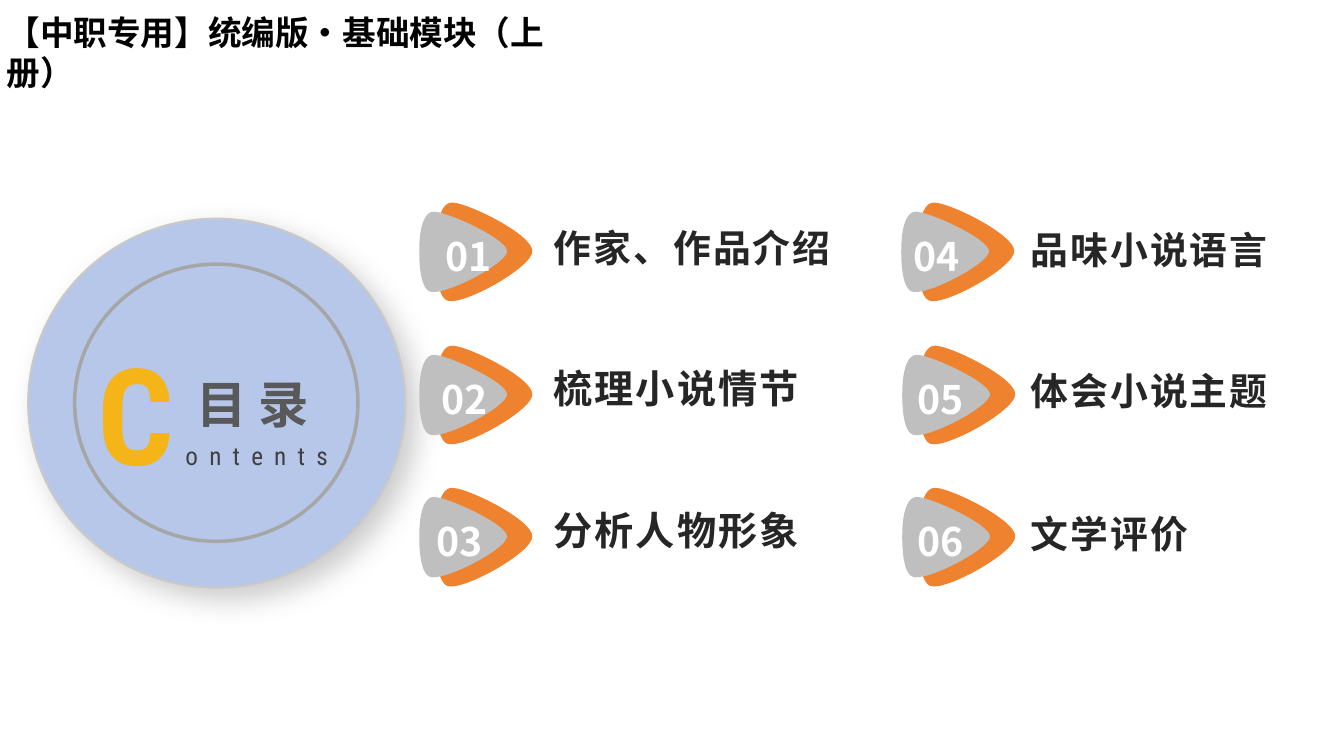
import pptx
import pptx.util
import pptx.dml.color
import pptx.enum.shapes
import pptx.enum.text
import pptx.oxml
import pptx.oxml.ns

PX = 9144  # one px is a hundredth of an inch
SANS = "Noto Sans CJK SC"
LATIN = "Roboto Condensed"
LEFT = pptx.enum.text.PP_ALIGN.LEFT
MID = pptx.enum.text.PP_ALIGN.CENTER
SHAPES = pptx.enum.shapes.MSO_SHAPE
SPACE = pptx.oxml.ns.nsdecls("a")
ROWS = 201, 343, 484

# Badge outlines: start point, then cubic curves, from the badge corner
BACK = (33, 0), [
    ((50, 1), (112, 32), (112, 48)),
    ((113, 64), (41, 104), (27, 97)),
    ((14, 90), (16, 42), (16, 42)),
    ((17, 41), (16, -1), (33, 0)),
]
FRONT = (15, 9), [
    ((30, 10), (86, 36), (87, 48)),
    ((87, 61), (22, 94), (10, 88)),
    ((-2, 83), (0, 43), (0, 43)),
    ((0, 43), (0, 8), (15, 9)),
]

# Row, badge left, number, number box left and width, label, label box, size
ITEMS = [
    (0, 416, "01", 426, 77, "作家、作品介绍", (537, 218, 312, 63), 27),
    (1, 416, "02", 420, 82, "梳理小说情节", (537, 357, 350, 64), 28),
    (2, 416, "03", 416, 79, "分析人物形象", (537, 497, 399, 72), 28),
    (0, 894, "04", 889, 79, "品味小说语言", (1010, 220, 283, 61), 27),
    (1, 895, "05", 889, 87, "体会小说主题", (1010, 360, 313, 63), 27),
    (2, 895, "06", 889, 87, "文学评价", (1010, 502, 313, 63), 27),
]


def px(n):
    return pptx.util.Emu(round(n * PX))


def rgb(code):
    return pptx.dml.color.RGBColor.from_string(code)


def add_run(para, text, size, color, bold=True, face=SANS, gap=0):
    run = para.add_run()
    run.text = text
    font = run.font
    font.size, font.bold, font.name = pptx.util.Pt(size), bold, face
    font.color.rgb = rgb(color)
    props = run._r.get_or_add_rPr()
    props.set("lang", "zh-CN")
    if gap:
        props.set("spc", str(round(gap * 100)))
    east = pptx.oxml.parse_xml(f'<a:ea {SPACE} typeface="{face}"/>')
    props.find(pptx.oxml.ns.qn("a:latin")).addnext(east)


def set_frame(frame, align=LEFT, pads=(10, 5, 10, 5), wrap=True, middle=False):
    frame.auto_size = pptx.enum.text.MSO_AUTO_SIZE.NONE
    frame.word_wrap = wrap
    anchor = pptx.enum.text.MSO_ANCHOR
    frame.vertical_anchor = anchor.MIDDLE if middle else anchor.TOP
    frame.margin_left, frame.margin_top, frame.margin_right, frame.margin_bottom = map(px, pads)
    para = frame.paragraphs[0]
    para.alignment = align
    return para


def add_text(slide, box, align=LEFT, **look):
    frame = slide.shapes.add_textbox(*map(px, box)).text_frame
    return set_frame(frame, align, **look)


def add_disc(slide, box, line, width):
    disc = slide.shapes.add_shape(SHAPES.OVAL, *map(px, box))
    disc.shadow.inherit = False
    disc.fill.solid()
    disc.fill.fore_color.rgb = rgb("B6C7EA")
    disc.line.color.rgb = rgb(line)
    disc.line.width = pptx.util.Pt(width)
    return disc


def add_shade(shape):
    shade = pptx.oxml.parse_xml(
        f'<a:outerShdw {SPACE} blurRad="254000" '
        'dist="127000" dir="2700000" algn="tl" rotWithShape="0">'
        '<a:srgbClr val="808080"><a:alpha val="40000"/></a:srgbClr>'
        '</a:outerShdw>')
    shape._element.spPr.find(pptx.oxml.ns.qn("a:effectLst")).append(shade)


def add_blob(slide, left, top, form, color):
    start, curves = form

    def place(spot):
        return px(left + spot[0]), px(top + spot[1])

    pen = slide.shapes.build_freeform(*place(start))
    pen.add_line_segments([place(curve[-1]) for curve in curves], close=True)
    blob = pen.convert_to_shape()
    # Turn each straight segment into its curve
    sides = list(blob._element.iter(pptx.oxml.ns.qn("a:lnTo")))
    for side, curve in zip(sides, curves):
        spots = "".join(
            f'<a:pt x="{x - blob.left}" y="{y - blob.top}"/>'
            for x, y in map(place, curve))
        bend = pptx.oxml.parse_xml(
            f'<a:cubicBezTo {SPACE}>{spots}</a:cubicBezTo>')
        side.getparent().replace(side, bend)
    blob.shadow.inherit = False
    blob.fill.solid()
    blob.fill.fore_color.rgb = rgb(color)
    blob.line.fill.background()


def add_item(slide, row, left, num, num_left, num_width, label, box, size):
    top = ROWS[row]
    add_blob(slide, left, top, BACK, "EE822F")
    add_blob(slide, left, top, FRONT, "BFBFBF")
    para = add_text(slide, (num_left, top + 25, num_width, 55), MID, middle=True)
    add_run(para, num, 28, "FFFFFF")
    para = add_text(slide, box, pads=(12, 5, 0, 5))
    add_run(para, label, size, "262626", gap=1.5)


def add_head(slide, text):
    head = slide.shapes.add_shape(
        SHAPES.ROUNDED_RECTANGLE, *map(px, (-3, 5, 608, 49)))
    head.shadow.inherit = False
    head.fill.background()
    head.line.fill.background()
    para = set_frame(head.text_frame, pads=(7, 4, 7, 4))
    add_run(para, text, 24, "000000")


def add_seal(slide):
    add_shade(add_disc(slide, (28, 217, 374, 366), "C9C9C9", 1.5))
    add_disc(slide, (74, 262, 281, 275), "A6A6A6", 2.5)
    para = add_text(slide, (87, 324, 273, 172), wrap=False)
    add_run(para, "C", 96, "F5B417", face=LATIN, gap=8)
    add_run(para, "ontents", 18, "404040", bold=False, face=LATIN, gap=8)
    para = add_text(slide, (181, 365, 139, 71), MID)
    add_run(para, "目 录", 36, "595959")


def main():
    deck = pptx.Presentation()
    deck.slide_width, deck.slide_height = px(1333), px(750)
    slide = deck.slides.add_slide(deck.slide_layouts[6])  # blank
    add_seal(slide)
    add_head(slide, "【中职专用】统编版·基础模块（上册）")
    for item in ITEMS:
        add_item(slide, *item)
    deck.save("out.pptx")


if __name__ == "__main__":
    main()
